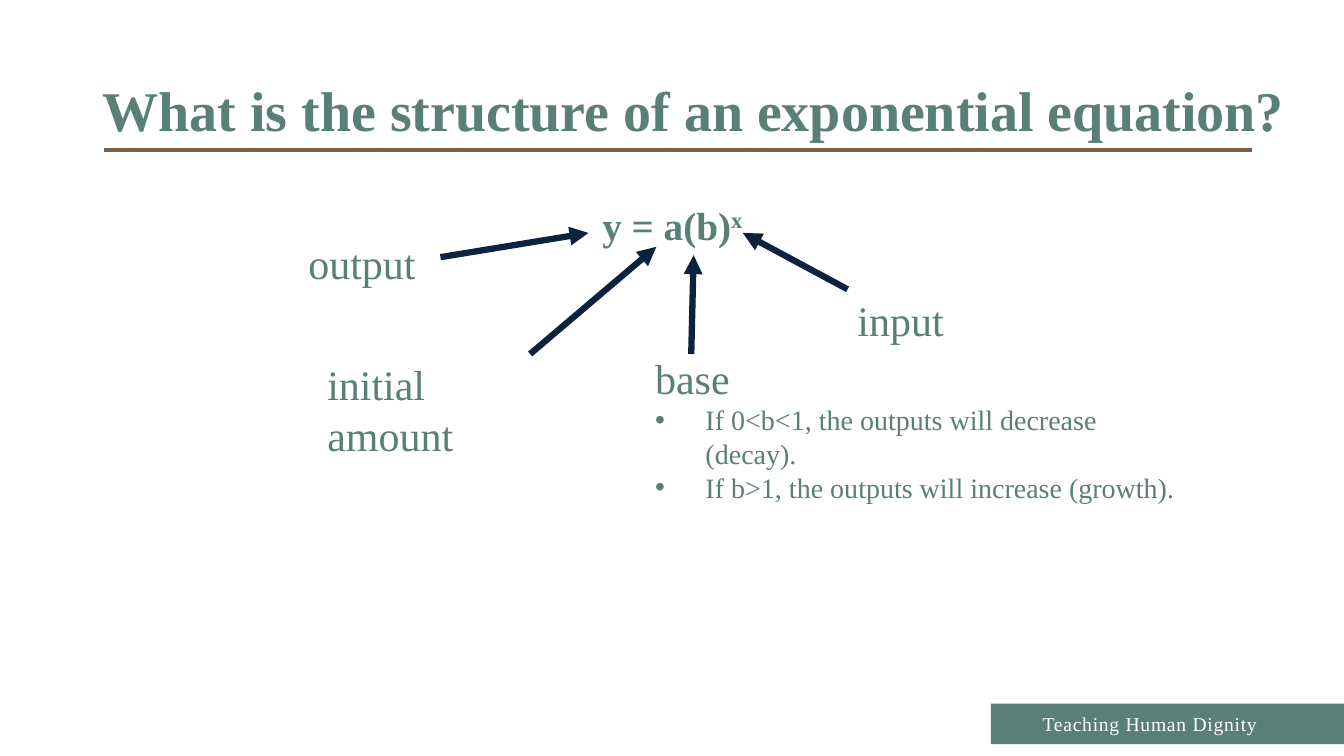
from pptx import Presentation
from pptx.dml.color import RGBColor
from pptx.enum.shapes import MSO_CONNECTOR, MSO_SHAPE
from pptx.enum.text import MSO_ANCHOR, PP_ALIGN
from pptx.oxml.ns import qn
from pptx.util import Cm, Pt
from lxml.etree import SubElement

COLORS = {"green": "597F77", "brown": "785F50", "navy": "0C2340", "white": "FFFFFF"}
FONT = "Times New Roman"

TITLE = ("What is the structure of an exponential equation?", (2.34, 1.02, 31.55, 3.68))
EQUATION = ("y = a(b)", "x", (2.34, 5.08, 29.21, 1.4))
FOOTER = ("Teaching Human Dignity", (24.54, 17.73, 7.39, 1.02))
FOOTER_BAR = (24.97, 17.73, 8.9, 1.02)
RULE = ((31.55, 3.78), (2.62, 3.78))
LABELS = [
    ("output", (7.52, 5.87, 3.28, 1.55), False),
    ("input", (21.36, 7.29, 2.69, 1.55), False),
    ("initial amount", (8, 8.92, 6.22, 1.55), True),
]
BASE = ("base", (16.26, 8.76, 13.97, 3.25))
BASE_RULES = [
    "If 0<b<1, the outputs will decrease (decay).",
    "If b>1, the outputs will increase (growth).",
]
ARROWS = [
    ((11.1, 6.48), (14.83, 5.87)),
    ((21.36, 7.29), (18.72, 5.87)),
    ((17.42, 8.92), (17.48, 6.43)),
    ((13.36, 8.92), (16.54, 6.22)),
]


def rgb(name):
    return RGBColor.from_string(COLORS[name])


def style(r, size, color="green", bold=False):
    r.font.name = FONT
    r.font.size = Pt(size)
    r.font.bold = bold
    r.font.color.rgb = rgb(color)


def add_text(s, text, box, size, color="green", bold=False, wrap=True,
             anchor=MSO_ANCHOR.TOP, align=PP_ALIGN.LEFT, spacing=1.0):
    tf = s.shapes.add_textbox(*map(Cm, box)).text_frame
    tf.word_wrap = wrap
    tf.vertical_anchor = anchor
    tf.text = text
    p = tf.paragraphs[0]
    p.alignment = align
    p.line_spacing = spacing
    style(p.runs[0], size, color, bold)
    return tf


def add_line(s, start, end, color, width, arrow=False):
    c = s.shapes.add_connector(MSO_CONNECTOR.STRAIGHT, *map(Cm, start + end))
    c.line.color.rgb = rgb(color)
    c.line.width = Pt(width)
    if arrow:
        SubElement(c.line._get_or_add_ln(), qn("a:tailEnd"), type="triangle")
    SubElement(c._element.spPr, qn("a:effectLst"))


def add_bullet(tf, text, size):
    p = tf.add_paragraph()
    p.text = text
    pPr = p._p.get_or_add_pPr()
    pPr.set("marL", str(Cm(1.27)))
    pPr.set("indent", str(-Cm(1.27)))
    SubElement(pPr, qn("a:buFont"), typeface="Arial")
    SubElement(pPr, qn("a:buChar"), char="•")
    style(p.runs[0], size)


def main():
    prs = Presentation()
    prs.slide_width, prs.slide_height = Cm(33.87), Cm(19.05)
    s = prs.slides.add_slide(prs.slide_layouts[6])

    bar = s.shapes.add_shape(MSO_SHAPE.RECTANGLE, *map(Cm, FOOTER_BAR))
    bar.shadow.inherit = False
    bar.fill.solid()
    bar.fill.fore_color.rgb = rgb("green")
    bar.line.fill.background()
    tf = add_text(s, *FOOTER, 14, "white", anchor=MSO_ANCHOR.MIDDLE, align=PP_ALIGN.RIGHT)
    tf.paragraphs[0].runs[0].font._element.set("spc", "50")

    add_line(s, *RULE, "brown", 2.25)
    add_text(s, *TITLE, 40, bold=True, anchor=MSO_ANCHOR.MIDDLE, spacing=0.9)

    formula, exponent, box = EQUATION
    tf = add_text(s, formula, box, 28, bold=True, align=PP_ALIGN.CENTER, spacing=0.9)
    r = tf.paragraphs[0].add_run()
    r.text = exponent
    style(r, 28, bold=True)
    r.font._element.set("baseline", "30000")

    for text, box, wrap in LABELS:
        add_text(s, text, box, 30, wrap=wrap)
    tf = add_text(s, *BASE, 30)
    for text in BASE_RULES:
        add_bullet(tf, text, 20)

    for start, end in ARROWS:
        add_line(s, start, end, "navy", 4.5, arrow=True)

    prs.save("out.pptx")


if __name__ == "__main__":
    main()
